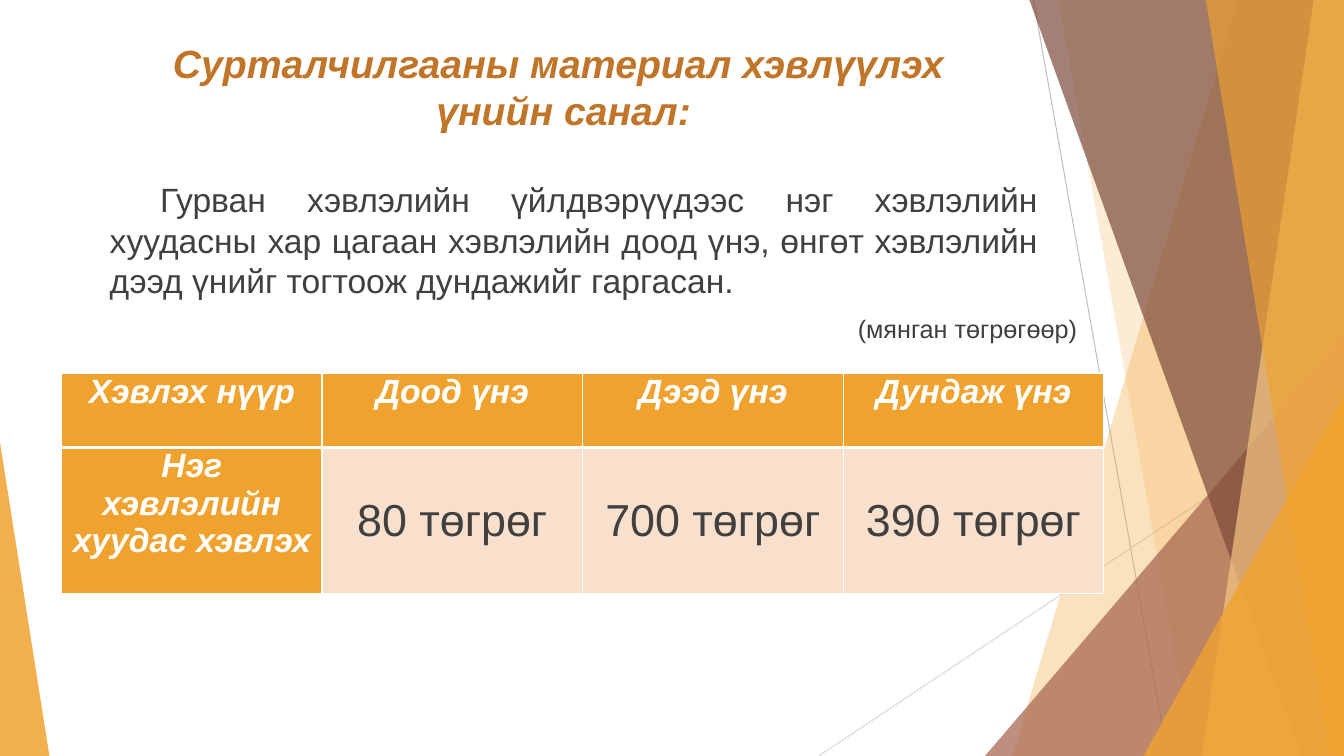
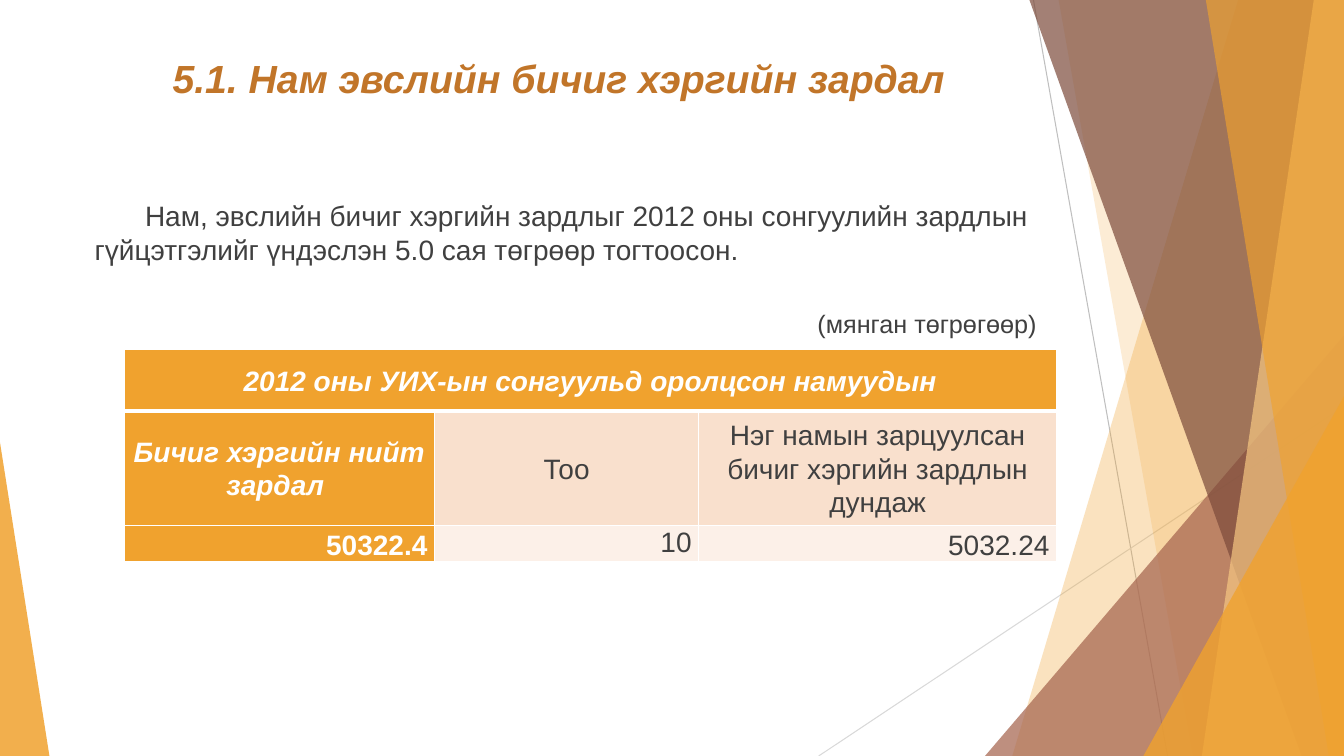
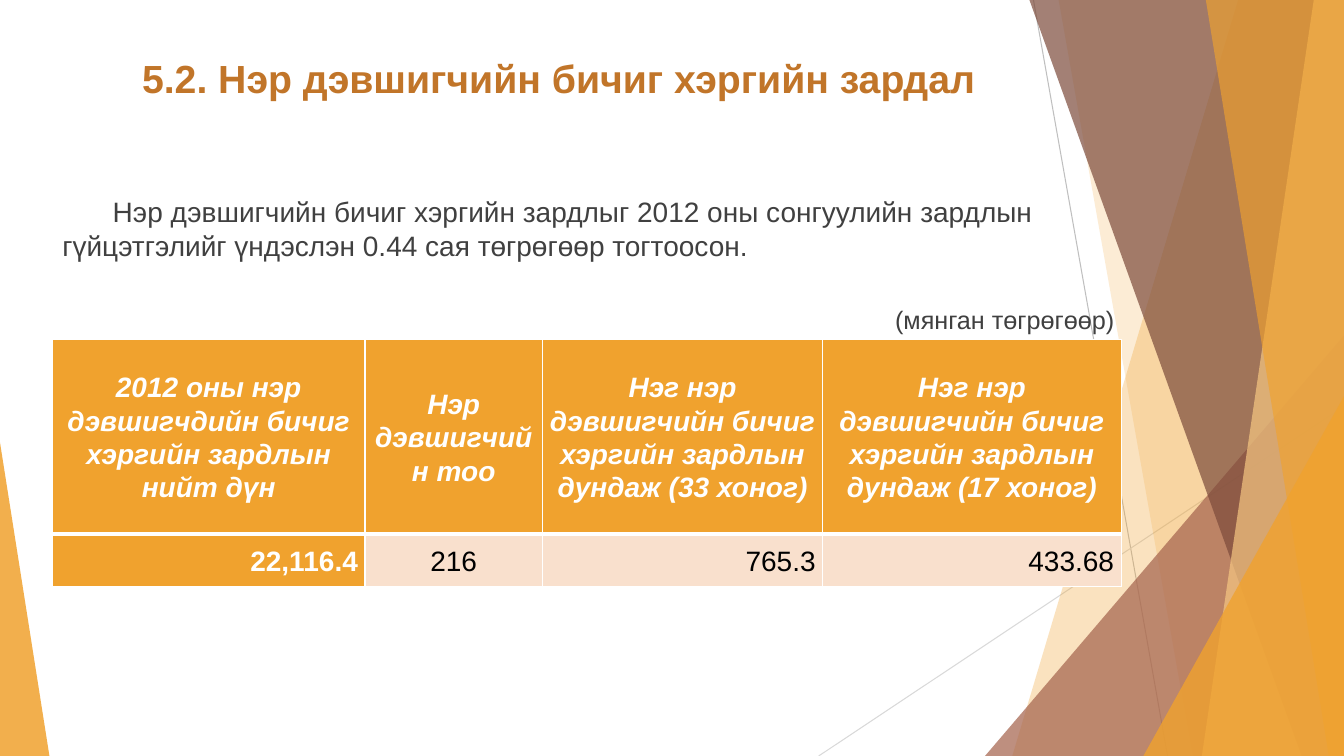
import dataclasses

import lxml.etree
import pptx
import pptx.dml.color
import pptx.enum.shapes
import pptx.enum.text
import pptx.oxml.ns
import pptx.util

Align = pptx.enum.text.PP_ALIGN
Anchor = pptx.enum.text.MSO_ANCHOR
qn = pptx.oxml.ns.qn
inches = pptx.util.Inches


@dataclasses.dataclass(frozen=True)
class Theme:
    width: float = 13.33
    height: float = 7.5
    font: str = "Arial"
    orange: str = "F0A22E"
    apricot: str = "F6C782"
    rust: str = "A5644E"
    brown: str = "7C4B3B"
    title: str = "C17529"
    text: str = "404040"
    black: str = "000000"
    white: str = "FFFFFF"
    tint: str = "F9E0CD"
    pale: str = "FCF0E8"
    title_size: int = 28
    unit_size: int = 18
    first_indent: float = 0.5
    cell_inset: float = 0.07
    border: int = 1
    header_border: int = 3


THEME = Theme()


@dataclasses.dataclass(frozen=True)
class CellStyle:
    fill: str = THEME.tint
    color: str = THEME.text
    bold: bool = False
    italic: bool = False
    size: int = 20
    spacing: float = 1.07
    align: Align = Align.CENTER
    anchor: Anchor = Anchor.MIDDLE


change = dataclasses.replace
VALUE = CellStyle()
HEAD = CellStyle(THEME.orange, THEME.white, True, True)
TOTAL = change(HEAD, italic=False, align=Align.RIGHT)
BIG_HEAD = change(HEAD, size=24, spacing=1.0, anchor=Anchor.TOP)
PRICE = change(VALUE, size=32, spacing=1.0)
PALE_RIGHT = change(VALUE, fill=THEME.pale, align=Align.RIGHT)
BLACK = change(VALUE, color=THEME.black)
BLACK_RIGHT = change(BLACK, align=Align.RIGHT)

# Background: lines are (start, end, colour).
LINES = [((10.25, 0), (11.58, 7.5), "BFBFBF"), ((13.33, 4.03), (8.12, 7.5), "D9D9D9")]
# Bands reach the right edge: (kind, top x, bottom x, colour, opacity %).
# Triangles stand on the bottom edge: (kind, left, width, height, apex, colour, opacity %).
FACETS = [
    ("band", 12.28, 10.04, THEME.orange, 30),
    ("band", 10.5, 11.83, THEME.orange, 20),
    ("triangle", 9.77, 3.56, 4.17, 1, THEME.rust, 72),
    ("band", 10.21, 12.91, THEME.brown, 70),
    ("band", 13.03, 11.92, THEME.apricot, 70),
    ("band", 11.96, 13.18, THEME.orange, 65),
    ("triangle", 11.34, 1.99, 3.57, 1, THEME.orange, 80),
    ("triangle", 0, 0.49, 3.11, 0, THEME.orange, 85),
]

UNIT = "(мянган төгрөгөөр)"
SLIDES = [
    {
        "title": ["Сурталчилгааны материал хэвлүүлэх ", "үнийн санал:"],
        "title_box": (0.89, 0.34, 9.4, 1.01),
        "title_italic": True,
        "body": "Гурван хэвлэлийн үйлдвэрүүдээс нэг хэвлэлийн хуудасны хар цагаан "
                "хэвлэлийн доод үнэ, өнгөт хэвлэлийн дээд үнийг тогтоож дундажийг гаргасан.",
        "body_box": (0.99, 1.73, 9.4, 1.35),
        "body_size": 24,
        "body_align": Align.JUSTIFY,
        "unit_at": (8.41, 3.06),
        "table_at": (0.61, 3.7),
        "columns": [10.34 / 4] * 4,
        "rows": [0.74, 1.45],
        "cells": [
            [("Хэвлэх нүүр", BIG_HEAD), ("Доод үнэ", BIG_HEAD),
             ("Дээд үнэ", BIG_HEAD), ("Дундаж үнэ", BIG_HEAD)],
            [("Нэг хэвлэлийн хуудас хэвлэх", BIG_HEAD), ("80 төгрөг", PRICE),
             ("700 төгрөг", PRICE), ("390 төгрөг", PRICE)],
        ],
    },
    {
        "title": ["5.1. Нам эвслийн бичиг хэргийн зардал"],
        "title_box": (0.84, 0.49, 9.4, 0.77),
        "title_italic": True,
        "body": "Нам, эвслийн бичиг хэргийн зардлыг 2012 оны сонгуулийн зардлын "
                "гүйцэтгэлийг үндэслэн 5.0 сая төгрөөр тогтоосон.",
        "body_box": (0.84, 1.92, 10.04, 1.09),
        "body_size": 20,
        "body_align": Align.LEFT,
        "unit_at": (8.01, 3.01),
        "table_at": (1.23, 3.47),
        "columns": [3.08, 2.62, 3.55],
        "rows": [0.61, 1.13, 0.36],
        "cells": [
            [("2012 оны УИХ-ын сонгуульд оролцсон намуудын", HEAD)],
            [("Бичиг хэргийн нийт зардал ", HEAD), ("Тоо", VALUE),
             ("Нэг намын зарцуулсан бичиг хэргийн зардлын дундаж", VALUE)],
            [("50322.4", change(TOTAL, anchor=Anchor.BOTTOM)),
             ("10", change(PALE_RIGHT, anchor=Anchor.TOP)),
             ("5032.24", change(PALE_RIGHT, anchor=Anchor.BOTTOM))],
        ],
    },
    {
        "title": ["5.2. Нэр дэвшигчийн бичиг хэргийн зардал"],
        "title_box": (0.84, 0.49, 9.4, 0.77),
        "title_italic": False,
        "body": "Нэр дэвшигчийн бичиг хэргийн зардлыг 2012 оны сонгуулийн зардлын "
                "гүйцэтгэлийг үндэслэн 0.44 сая төгрөгөөр тогтоосон.",
        "body_box": (0.52, 1.88, 10.04, 1.09),
        "body_size": 20,
        "body_align": Align.LEFT,
        "unit_at": (8.78, 2.97),
        "table_at": (0.52, 3.37),
        "columns": [3.1, 1.76, 2.78, 2.96],
        "rows": [1.93, 0.52],
        "cells": [
            [("2012 оны нэр дэвшигчдийн бичиг хэргийн зардлын нийт дүн", HEAD),
             ("Нэр дэвшигчийн тоо", HEAD),
             ("Нэг нэр дэвшигчийн бичиг хэргийн зардлын дундаж (33 хоног)", HEAD),
             ("Нэг нэр дэвшигчийн бичиг хэргийн зардлын дундаж (17 хоног)", HEAD)],
            [("22,116.4", TOTAL), ("216", BLACK),
             ("765.3", BLACK_RIGHT), ("433.68", BLACK_RIGHT)],
        ],
    },
]


def rgb(color):
    return pptx.dml.color.RGBColor.from_string(color)


def add_run(paragraph, text, size, color, bold=False, italic=False):
    run = paragraph.add_run()
    run.text = text
    font = run.font
    font.name, font.size = THEME.font, pptx.util.Pt(size)
    font.bold, font.italic = bold, italic
    font.color.rgb = rgb(color)


def add_line(slide, start, end, color):
    line = slide.shapes.add_connector(
        pptx.enum.shapes.MSO_CONNECTOR.STRAIGHT, *map(inches, start + end))
    line.line.color.rgb = rgb(color)
    line.line.width = pptx.util.Pt(0.75)
    lxml.etree.SubElement(line.element.spPr, qn("a:effectLst"))
    return line


def add_band(slide, top_x, bottom_x):
    builder = slide.shapes.build_freeform(inches(top_x), 0)
    corners = [(THEME.width, 0), (THEME.width, THEME.height), (bottom_x, THEME.height)]
    builder.add_line_segments([(inches(x), inches(y)) for x, y in corners], close=True)
    return builder.convert_to_shape()


def add_triangle(slide, left, width, height, apex):
    shape = slide.shapes.add_shape(
        pptx.enum.shapes.MSO_SHAPE.ISOSCELES_TRIANGLE,
        *map(inches, (left, THEME.height - height, width, height)))
    shape.adjustments[0] = apex
    return shape


def add_facet(slide, kind, *values):
    *geometry, color, opacity = values
    shape = (add_band if kind == "band" else add_triangle)(slide, *geometry)
    shape.shadow.inherit = False
    shape.line.fill.background()
    shape.fill.solid()
    shape.fill.fore_color.rgb = rgb(color)
    color_element = next(shape.element.spPr.iter(qn("a:srgbClr")))
    lxml.etree.SubElement(color_element, qn("a:alpha"), val=str(opacity * 1000))
    return shape


def move_background_to_layout(slide, layout):
    """Draw the facets with the slide's shape tools, then hand them to the layout."""
    parts = [add_line(slide, *line) for line in LINES]
    parts += [add_facet(slide, *facet) for facet in FACETS]
    for part in parts:
        layout.shapes.element.append(part.element)


def keep_only_title(layout):
    for placeholder in list(layout.placeholders):
        if placeholder.placeholder_format.type != pptx.enum.shapes.PP_PLACEHOLDER.TITLE:
            placeholder.element.getparent().remove(placeholder.element)


def format_title(slide, content):
    title = slide.shapes.title
    title.left, title.top, title.width, title.height = map(inches, content["title_box"])
    frame = title.text_frame
    frame.auto_size = pptx.enum.text.MSO_AUTO_SIZE.NONE
    frame.vertical_anchor = Anchor.TOP
    paragraph = frame.paragraphs[0]
    paragraph.alignment = Align.CENTER
    for index, line in enumerate(content["title"]):
        if index:
            paragraph.add_line_break()
        add_run(paragraph, line, THEME.title_size, THEME.title, True, content["title_italic"])


def add_text(slide, box, text, size, align=Align.LEFT, wrap=True, indent=0):
    frame = slide.shapes.add_textbox(*map(inches, box)).text_frame
    frame.word_wrap = wrap
    paragraph = frame.paragraphs[0]
    paragraph.alignment = align
    if indent:
        paragraph._p.get_or_add_pPr().set("indent", str(inches(indent)))
    add_run(paragraph, text, size, THEME.text)


def set_borders(cell, bottom):
    properties = cell._tc.get_or_add_tcPr()
    for side, points in zip("LRTB", [THEME.border] * 3 + [bottom]):
        line = lxml.etree.SubElement(
            properties, qn(f"a:ln{side}"), w=str(pptx.util.Pt(points)))
        fill = lxml.etree.SubElement(line, qn("a:solidFill"))
        lxml.etree.SubElement(fill, qn("a:srgbClr"), val=THEME.white)


def format_cell(cell, style, bottom):
    set_borders(cell, bottom)
    cell.fill.solid()
    cell.fill.fore_color.rgb = rgb(style.fill)
    cell.margin_left = cell.margin_right = inches(THEME.cell_inset)
    cell.margin_top = cell.margin_bottom = 0
    cell.vertical_anchor = style.anchor


def add_table(slide, content):
    columns, rows = content["columns"], content["rows"]
    box = content["table_at"] + (sum(columns), sum(rows))
    table = slide.shapes.add_table(len(rows), len(columns), *map(inches, box)).table
    for column, width in zip(table.columns, columns):
        column.width = inches(width)
    for row, height in zip(table.rows, rows):
        row.height = inches(height)
    for row_index, entries in enumerate(content["cells"]):
        bottom = THEME.border if row_index else THEME.header_border
        if len(entries) == 1:
            table.cell(row_index, 0).merge(table.cell(row_index, len(columns) - 1))
        for column_index in range(len(columns)):
            style = entries[min(column_index, len(entries) - 1)][1]
            format_cell(table.cell(row_index, column_index), style, bottom)
        for column_index, (text, style) in enumerate(entries):
            paragraph = table.cell(row_index, column_index).text_frame.paragraphs[0]
            paragraph.alignment = style.align
            paragraph.line_spacing = style.spacing
            add_run(paragraph, text, style.size, style.color, style.bold, style.italic)


def main():
    presentation = pptx.Presentation()
    presentation.slide_width = inches(THEME.width)
    presentation.slide_height = inches(THEME.height)
    layout = presentation.slide_layouts.get_by_name("Title Only")
    keep_only_title(layout)
    for index, content in enumerate(SLIDES):
        slide = presentation.slides.add_slide(layout)
        if index == 0:
            move_background_to_layout(slide, layout)
        format_title(slide, content)
        add_text(slide, content["body_box"], content["body"], content["body_size"],
                 content["body_align"], indent=THEME.first_indent)
        add_table(slide, content)
        add_text(slide, content["unit_at"] + (2.4, 0.4), UNIT, THEME.unit_size, wrap=False)
    presentation.save("out.pptx")


if __name__ == "__main__":
    main()
